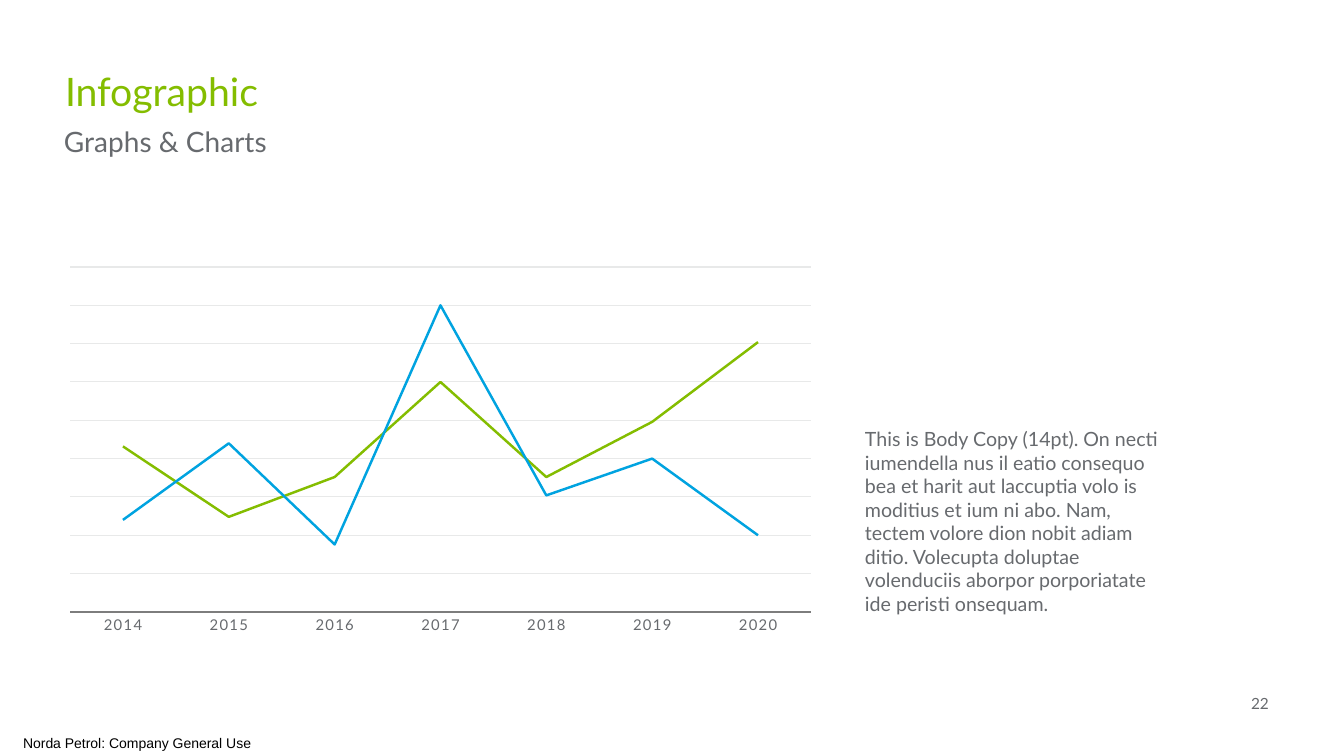
from lxml.etree import SubElement
from pptx import Presentation
from pptx.chart.data import CategoryChartData
from pptx.dml.color import RGBColor
from pptx.enum.chart import XL_CHART_TYPE, XL_TICK_MARK
from pptx.enum.text import MSO_ANCHOR, MSO_AUTO_SIZE, PP_ALIGN
from pptx.oxml.ns import qn
from pptx.util import Pt

PX = 12700 * 72 / 100.8
GREEN = RGBColor(0x84, 0xBD, 0x00)
BLUE = RGBColor(0x00, 0xA3, 0xE0)
GREY = RGBColor(0x67, 0x6A, 0x6E)
AXIS_GREY = RGBColor(0x7D, 0x7D, 0x7D)
GRID_GREY = RGBColor(0xE8, 0xE9, 0xE9)
BLACK = RGBColor(0, 0, 0)

YEARS = [str(year) for year in range(2014, 2021)]
TRENDS = [
    ("Series 1", GREEN, (54, 31, 44, 75, 44, 62, 88)),
    ("Series 2", BLUE, (30, 55, 22, 100, 38, 50, 25)),
]
BODY_COPY = (
    "This is Body Copy (14pt). On necti iumendella nus il eatio consequo "
    "bea et harit aut laccuptia volo is moditius et ium ni abo. Nam, tectem "
    "volore dion nobit adiam ditio. Volecupta doluptae volenduciis aborpor "
    "porporiatate ide peristi onsequam."
)


def px(length):
    return round(length * PX)


def apply(target, values):
    for name, value in values.items():
        setattr(target, name, value)


def style_font(font, size, color, name="Lato"):
    apply(font, {"size": Pt(size), "name": name, "bold": False})
    font.color.rgb = color


def style_line(line, color, width):
    line.color.rgb = color
    line.width = Pt(width)


def fill_text(holder, box, text, size, color, name="Lato", inset=(10, 5),
              align=PP_ALIGN.LEFT, anchor=MSO_ANCHOR.TOP):
    apply(holder, dict(zip(("left", "top", "width", "height"), map(px, box))))
    frame = holder.text_frame
    side, end = map(px, inset)
    apply(frame, {
        "word_wrap": True, "auto_size": MSO_AUTO_SIZE.NONE,
        "vertical_anchor": anchor, "margin_left": side, "margin_right": side,
        "margin_top": end, "margin_bottom": end,
    })
    paragraph = frame.paragraphs[0]
    paragraph.alignment = align
    run = paragraph.add_run()
    run.text = text
    style_font(run.font, size, color, name)


def add_text(slide, box, *args, **options):
    fill_text(slide.shapes.add_textbox(0, 0, 0, 0), box, *args, **options)


def add_heading(slide, box):
    left, top, width, height = box
    fill_text(slide.shapes.title, (left + 11, top, width, height),
              "Infographic", 28, GREEN, inset=(0, 5))
    add_text(slide, (left, top + 58, width, height),
             "Graphs & Charts", 20, GREY)


def set_plot_area(chart, box, plot):
    left, top, width, height = box
    fractions = {
        "x": (plot[0] - left) / width, "y": (plot[1] - top) / height,
        "w": plot[2] / width, "h": plot[3] / height,
    }
    area = chart.element.xpath(".//c:plotArea")[0]
    for old in area.findall(qn("c:layout")):
        area.remove(old)
    layout = SubElement(area, qn("c:layout"))
    area.insert(0, layout)
    manual = SubElement(layout, qn("c:manualLayout"))
    settings = {"layoutTarget": "inner", "xMode": "edge", "yMode": "edge"}
    settings.update({key: f"{part:.4f}" for key, part in fractions.items()})
    for tag, value in settings.items():
        SubElement(manual, qn(f"c:{tag}")).set("val", value)


def add_trend_chart(slide, box):
    trend_data = CategoryChartData()
    trend_data.categories = YEARS
    for name, _, values in TRENDS:
        trend_data.add_series(name, values)
    chart = slide.shapes.add_chart(
        XL_CHART_TYPE.LINE, *map(px, box), trend_data).chart
    apply(chart, {"has_title": False, "has_legend": False})
    style_font(chart.font, 10, GREY)
    chart.plots[0].vary_by_categories = False
    for series, (_, color, _) in zip(chart.plots[0].series, TRENDS):
        series.smooth = False
        style_line(series.format.line, color, 1.75)

    years = chart.category_axis
    apply(years, {"major_tick_mark": XL_TICK_MARK.NONE,
                  "minor_tick_mark": XL_TICK_MARK.NONE})
    style_line(years.format.line, AXIS_GREY, 1.5)
    style_font(years.tick_labels.font, 10.6, GREY)
    chart.element.xpath(".//c:catAx//a:defRPr")[0].set("spc", "100")

    scale = chart.value_axis
    apply(scale, {"minimum_scale": 0, "maximum_scale": 112.5,
                  "major_unit": 12.5, "has_major_gridlines": True,
                  "visible": False})
    style_line(scale.major_gridlines.format.line, GRID_GREY, 0.75)
    left, top, width, _ = box
    set_plot_area(chart, box, (left + 16, top + 7, width - 30, 345))


def add_footer(slide, box):
    left, top, width, height = box
    add_text(slide, (left + width - 114, top, 39, 25), "22", 11, GREY,
             inset=(0, 5), align=PP_ALIGN.RIGHT, anchor=MSO_ANCHOR.MIDDLE)
    add_text(slide, (left, top + height - 27, 274, 27),
             "Norda Petrol: Company General Use", 10, BLACK, "Arial",
             inset=(0, 0), align=PP_ALIGN.CENTER, anchor=MSO_ANCHOR.MIDDLE)


def main():
    deck = Presentation()
    apply(deck, {"slide_width": px(1344), "slide_height": px(756)})
    slide = deck.slides.add_slide(deck.slide_layouts[5])
    add_footer(slide, (0, 691, 1344, 65))
    add_trend_chart(slide, (54, 260, 771, 381))
    add_heading(slide, (54, 62, 499, 57))
    add_text(slide, (855, 422, 319, 314), BODY_COPY, 14, GREY)
    deck.save("out.pptx")


if __name__ == "__main__":
    main()
